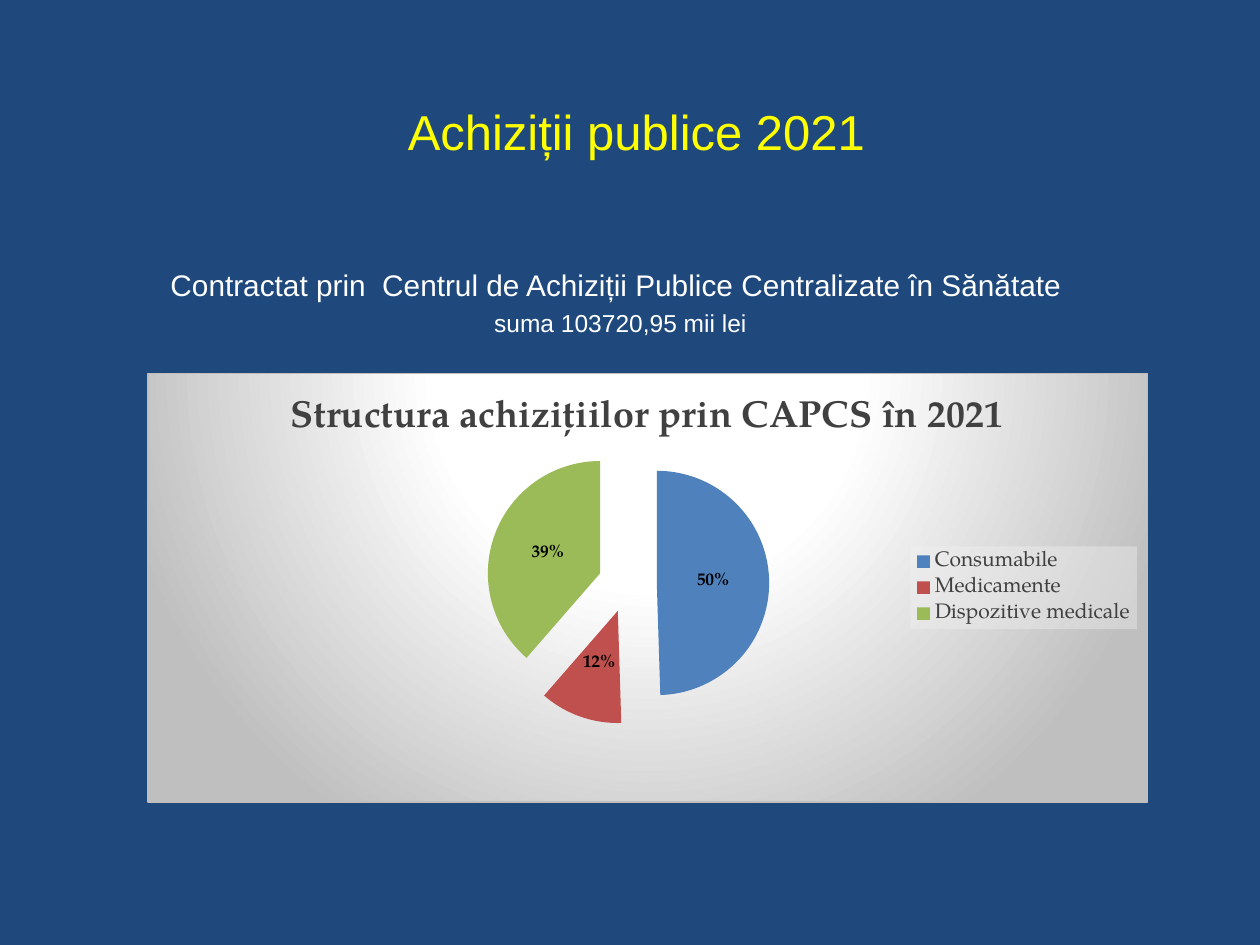
from lxml import etree
from pptx import Presentation
from pptx import util as u
from pptx.chart.data import CategoryChartData
from pptx.dml.color import RGBColor
from pptx.enum import chart as charts, text
from pptx.oxml import parse_xml
from pptx.oxml.ns import nsdecls, qn

COLORS = {
    "background": "1F497D", "title": "FFFF00", "white": "FFFFFF",
    "dark": "404040", "black": "000000", "edge": "BFBFBF", "legend": "F2F2F2",
    "Consumabile": "4F81BD", "Medicamente": "C0504D",
    "Dispozitive medicale": "9BBB59",
}
SHARES = {"Consumabile": 50, "Medicamente": 12, "Dispozitive medicale": 39}
CHART_FONT = "TeX Gyre Pagella"


def style(font, name, size, color, bold=False):
    font.name = name
    font.size = u.Pt(size)
    font.bold = bold
    font.color.rgb = RGBColor.from_string(COLORS[color])


def add_centred_text(bounds, anchor, lines):
    """Add a text box with one centred paragraph per (wording, size, color)."""
    box = slide.shapes.add_textbox(*[u.Inches(value) for value in bounds])
    frame = box.text_frame
    frame.word_wrap = True
    frame.vertical_anchor = anchor
    for index, (wording, size, color) in enumerate(lines):
        para = frame.add_paragraph() if index else frame.paragraphs[0]
        para.alignment = text.PP_ALIGN.CENTER
        if index:
            para.space_before = u.Pt(0.2 * size)
        span = para.add_run()
        span.text = wording
        style(span.font, "Arial", size, color)
    return frame


deck = Presentation()
deck.slide_width, deck.slide_height = u.Inches(10), u.Inches(7.5)
slide = deck.slides.add_slide(deck.slide_layouts[6])
slide.background.fill.solid()
slide.background.fill.fore_color.rgb = RGBColor.from_string(COLORS["background"])

# Headings
title = add_centred_text((1.77, 0.54, 6.56, 0.73), text.MSO_ANCHOR.BOTTOM,
                         [("Achiziții publice 2021", 28, "title")])
title.margin_left = title.margin_right = u.Inches(0.05)
title.margin_top = title.margin_bottom = 0
add_centred_text((0.91, 2.07, 8.03, 0.99), text.MSO_ANCHOR.TOP, [
    ("Contractat prin  Centrul de Achiziții Publice Centralizate în Sănătate ",
     17, "white"),
    ("suma 103720,95 mii lei", 14, "white"),
])

# Pie chart
data = CategoryChartData()
data.categories = list(SHARES)
data.add_series("Series 1", list(SHARES.values()))
chart = slide.shapes.add_chart(
    charts.XL_CHART_TYPE.PIE, u.Inches(1.17), u.Inches(2.96),
    u.Inches(7.94), u.Inches(3.41), data).chart
style(chart.font, CHART_FONT, 10, "white")

chart.has_title = True
heading = chart.chart_title.text_frame.paragraphs[0].add_run()
heading.text = "Structura achizițiilor prin CAPCS în 2021"
style(heading.font, CHART_FONT, 21.6, "dark", bold=True)

chart.has_legend = True
chart.legend.position = charts.XL_LEGEND_POSITION.RIGHT
chart.legend.include_in_layout = False
style(chart.legend.font, CHART_FONT, 12, "dark")

plot = chart.plots[0]
plot.vary_by_categories = True
series = plot.series[0]
for index, category in enumerate(SHARES):
    fill = series.points[index].format.fill
    fill.solid()
    fill.fore_color.rgb = RGBColor.from_string(COLORS[category])
labels = series.data_labels
labels.show_percentage = True
labels.show_value = False
labels.number_format = "0%"
labels.number_format_is_linked = False
labels.position = charts.XL_LABEL_POSITION.CENTER
style(labels.font, CHART_FONT, 10, "black", bold=True)

# Exploded slices
explosion = etree.Element(qn("c:explosion"), val="26")
series._element.find(qn("c:tx")).addnext(explosion)

# Plot position
plot_area = chart._chartSpace.chart.plotArea
for old_layout in plot_area.findall(qn("c:layout")):
    plot_area.remove(old_layout)
layout = etree.Element(qn("c:layout"))
manual = etree.SubElement(layout, qn("c:manualLayout"))
for tag, value in [("layoutTarget", "inner"), ("xMode", "edge"),
                   ("yMode", "edge"), ("x", "0"), ("y", "0.16"),
                   ("w", "0.96"), ("h", "0.66")]:
    etree.SubElement(manual, qn("c:" + tag), val=value)
plot_area.insert(0, layout)

# Chart and legend backgrounds
stops = "".join(
    f'<a:gs pos="{percent * 1000}"><a:srgbClr val="{COLORS[name]}"/></a:gs>'
    for percent, name in [(0, "white"), (39, "white"), (100, "edge")])
chart_format = parse_xml(
    f'<c:spPr {nsdecls("c", "a")}><a:gradFill><a:gsLst>{stops}</a:gsLst>'
    '<a:path path="circle"><a:fillToRect l="50000" t="-80000" r="50000" '
    'b="180000"/></a:path></a:gradFill><a:ln w="9525"><a:solidFill>'
    f'<a:srgbClr val="{COLORS["edge"]}"/></a:solidFill></a:ln></c:spPr>')
legend_format = parse_xml(
    f'<c:spPr {nsdecls("c", "a")}><a:solidFill>'
    f'<a:srgbClr val="{COLORS["legend"]}"><a:alpha val="39000"/></a:srgbClr>'
    '</a:solidFill><a:ln><a:noFill/></a:ln></c:spPr>')
for parent, part_format in [(chart._chartSpace, chart_format),
                            (chart.legend._element, legend_format)]:
    parent.find(qn("c:txPr")).addprevious(part_format)

deck.save("out.pptx")
